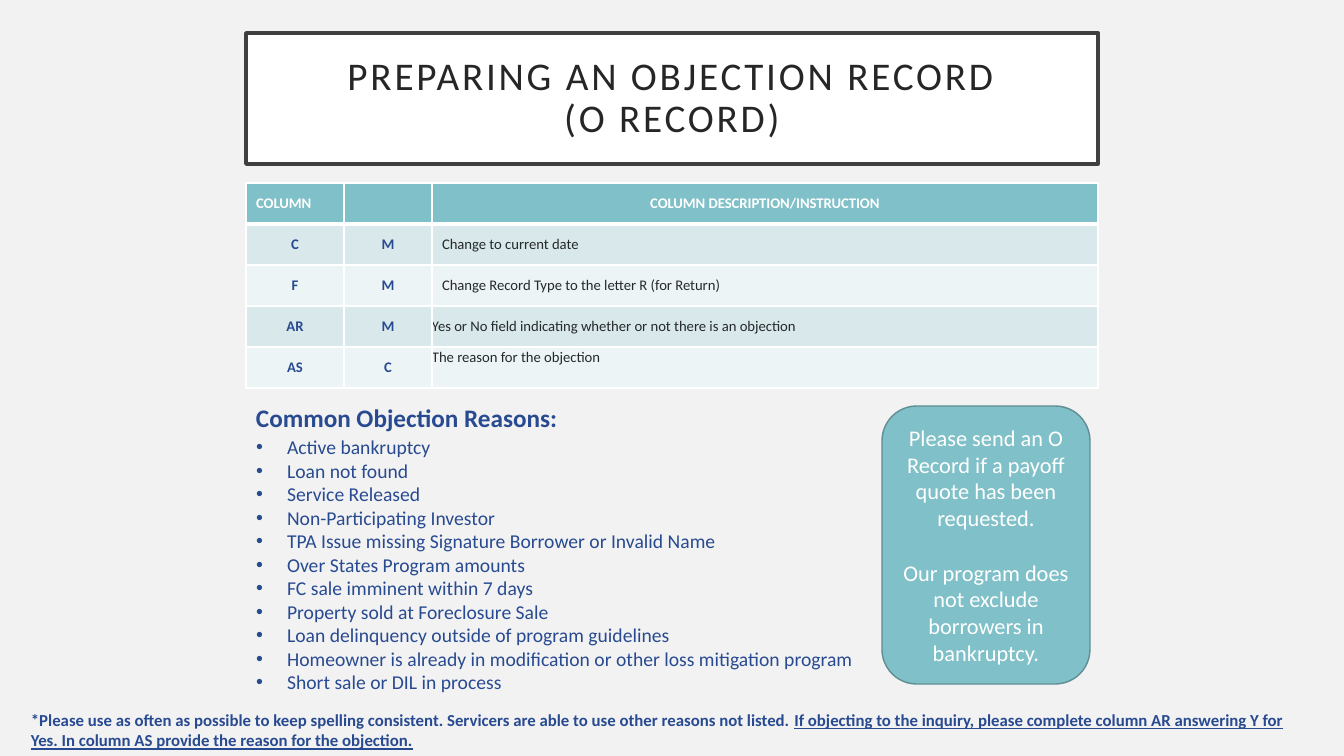
from lxml import etree
from pptx import Presentation
from pptx.dml.color import RGBColor
from pptx.enum.shapes import MSO_SHAPE
from pptx.enum.text import MSO_ANCHOR, MSO_AUTO_SIZE, PP_ALIGN
from pptx.oxml.ns import qn
from pptx.util import Emu, Pt

ROUNDED = MSO_SHAPE.ROUNDED_RECTANGLE
TOP, MIDDLE = MSO_ANCHOR.TOP, MSO_ANCHOR.MIDDLE
LEFT, CENTER = PP_ALIGN.LEFT, PP_ALIGN.CENTER
NO_FIT = MSO_AUTO_SIZE.NONE

COLORS = {
    "background": "F2F2F2", "white": "FFFFFF", "frame": "404040",
    "title": "262626", "teal": "80C0C8", "teal_edge": "5F8E94",
    "band_dark": "D8E8EB", "band_light": "EDF4F5",
    "navy": "284A91", "ink": "25292B",
}

COLUMN_WIDTHS = [98, 88, 666]
HEADER = ["COLUMN", "", "COLUMN DESCRIPTION/INSTRUCTION"]
RECORD_ROWS = [
    ["C", "M", "Change to current date"],
    ["F", "M", "Change Record Type to the letter R (for Return)"],
    ["AR", "M", "Yes or No field indicating whether or not there is an objection"],
    ["AS", "C", "The reason for the objection"],
]
OBJECTION_REASONS = [
    "Active bankruptcy",
    "Loan not found",
    "Service Released",
    "Non-Participating Investor",
    "TPA Issue missing Signature Borrower or Invalid Name",
    "Over States Program amounts",
    "FC sale imminent within 7 days",
    "Property sold at Foreclosure Sale",
    "Loan delinquency outside of program guidelines",
    "Homeowner is already in modification or other loss mitigation program",
    "Short sale or DIL in process",
]
ADVICE = [
    "Please send an O Record if a payoff quote has been requested.",
    "Our program does not exclude borrowers in bankruptcy.",
]
FOOTNOTE = [
    ("*Please use as often as possible to keep spelling consistent. "
     "Servicers are able to use other reasons not listed. ", False),
    ("If objecting to the inquiry, please complete column AR answering Y for Yes. "
     "In column AS provide the reason for the objection.", True),
]


def px(length):
    return Emu(round(length * 914400 / 100.8))


def rgb(name):
    return RGBColor.from_string(COLORS[name])


class SlideBuilder:
    """Hold the deck style and add each kind of element to the slide."""

    def __init__(self, width, height):
        self.font = "Calibri"
        self.presentation = Presentation()
        self.presentation.slide_width = px(width)
        self.presentation.slide_height = px(height)
        self.slide = self.presentation.slides.add_slide(
            self.presentation.slide_layouts[1])
        self.paint(self.slide.background, "background")

    def paint(self, target, color):
        target.fill.solid()
        target.fill.fore_color.rgb = rgb(color)

    def outline(self, shape, color, width):
        shape.line.color.rgb = rgb(color)
        shape.line.width = Pt(width)

    def place(self, shape, box):
        shape.left, shape.top, shape.width, shape.height = map(px, box)

    def inset(self, target, left, top, right, bottom):
        target.margin_left, target.margin_top = px(left), px(top)
        target.margin_right, target.margin_bottom = px(right), px(bottom)

    def run(self, paragraph, text, size, color, bold=False, underline=False):
        run = paragraph.add_run()
        run.text = text
        font = run.font
        font.name, font.size, font.bold = self.font, Pt(size), bold
        font.underline = underline
        font.color.rgb = rgb(color)
        return run

    def paragraphs(self, frame, count):
        return [frame.paragraphs[0]] + [frame.add_paragraph() for _ in range(count - 1)]

    def title(self, box, lines):
        shape = self.slide.shapes.title
        self.place(shape, box)
        self.paint(shape, "white")
        self.outline(shape, "frame", 2.5)
        frame = shape.text_frame
        frame.word_wrap, frame.auto_size = True, NO_FIT
        frame.vertical_anchor = MIDDLE
        self.inset(frame, 20, 20, 20, 20)
        paragraph = frame.paragraphs[0]
        paragraph.alignment, paragraph.line_spacing = CENTER, 0.9
        for index, line in enumerate(lines):
            if index:
                paragraph.add_line_break()
            run = self.run(paragraph, line, 28, "title")
            run.font._element.set("spc", "200")

    def bullets(self, box, items):
        shape = self.slide.placeholders[1]
        self.place(shape, box)
        frame = shape.text_frame
        frame.word_wrap, frame.auto_size = True, NO_FIT
        frame.vertical_anchor = TOP
        for paragraph, item in zip(self.paragraphs(frame, len(items)), items):
            paragraph.alignment, paragraph.space_before = LEFT, Pt(0)
            properties = paragraph._p.get_or_add_pPr()
            properties.set("marL", str(px(31)))
            properties.set("indent", str(px(-31)))
            etree.SubElement(properties, qn("a:buFont")).set("typeface", "Arial")
            etree.SubElement(properties, qn("a:buChar")).set("char", "•")
            self.run(paragraph, item, 14, "navy")

    def text(self, box, runs, size):
        frame = self.slide.shapes.add_textbox(*map(px, box)).text_frame
        frame.word_wrap = True
        for text, underline in runs:
            self.run(frame.paragraphs[0], text, size, "navy", True, underline)

    def callout(self, box, texts):
        shape = self.slide.shapes.add_shape(ROUNDED, *map(px, box))
        shape.shadow.inherit = False
        self.paint(shape, "teal")
        self.outline(shape, "teal_edge", 1)
        frame = shape.text_frame
        frame.word_wrap, frame.vertical_anchor = True, MIDDLE
        for index, paragraph in enumerate(self.paragraphs(frame, len(texts))):
            paragraph.alignment = CENTER
            paragraph.space_before = Pt(19.5 if index else 0)
            self.run(paragraph, texts[index], 16, "white")

    def borders(self, cell, widths):
        properties = cell._tc.get_or_add_tcPr()
        for side, width in widths.items():
            line = etree.SubElement(properties, qn(f"a:ln{side}"), w=str(Pt(width)))
            fill = etree.SubElement(line, qn("a:solidFill"))
            etree.SubElement(fill, qn("a:srgbClr"), val=COLORS["white"])

    def cell(self, cell, text, row, column):
        header, description = row == 0, column == 2
        self.borders(cell, {"L": 1, "R": 1, "T": 3 if row == 1 else 1,
                            "B": 3 if header else 1})
        self.paint(cell, "teal" if header else "band_dark" if row % 2 else "band_light")
        cell.vertical_anchor = MIDDLE
        if row > 2 or not text:
            self.inset(cell, 0, 0, 0, 0)
        if not text:
            return
        paragraph = cell.text_frame.paragraphs[0]
        paragraph.alignment = LEFT if header != description else CENTER
        color = "white" if header else "ink" if description else "navy"
        self.run(paragraph, text, 10.5, color, header or not description)

    def table(self, left, top, widths, row_height, rows):
        table = self.slide.shapes.add_table(
            len(rows), len(widths), px(left), px(top),
            px(sum(widths)), px(row_height * len(rows))).table
        for column, width in zip(table.columns, widths):
            column.width = px(width)
        for row, texts in enumerate(rows):
            table.rows[row].height = px(row_height)
            for column, text in enumerate(texts):
                self.cell(table.cell(row, column), text, row, column)
        return table


def main():
    builder = SlideBuilder(1344, 756)
    builder.title((246, 33, 852, 131), ["PREPARING AN OBJECTION RECORD", "(O RECORD)"])
    table = builder.table(246, 183, COLUMN_WIDTHS, 41, [HEADER] + RECORD_ROWS)
    reason_cell = table.cell(len(RECORD_ROWS), 2)
    reason_cell.vertical_anchor = TOP
    reason_cell.margin_top = px(2)
    for row in range(1, len(RECORD_ROWS) + 1):
        for column in range(2):
            table.cell(row, column).text_frame.paragraphs[0].alignment = CENTER
    builder.text((246, 397, 852, 40), [("Common Objection Reasons:", False)], 18)
    builder.bullets((246, 430, 672, 271), OBJECTION_REASONS)
    builder.text((21, 705, 1301, 50), FOOTNOTE, 12)
    builder.callout((882, 406, 208, 278), ADVICE)
    builder.presentation.save("out.pptx")


if __name__ == "__main__":
    main()
